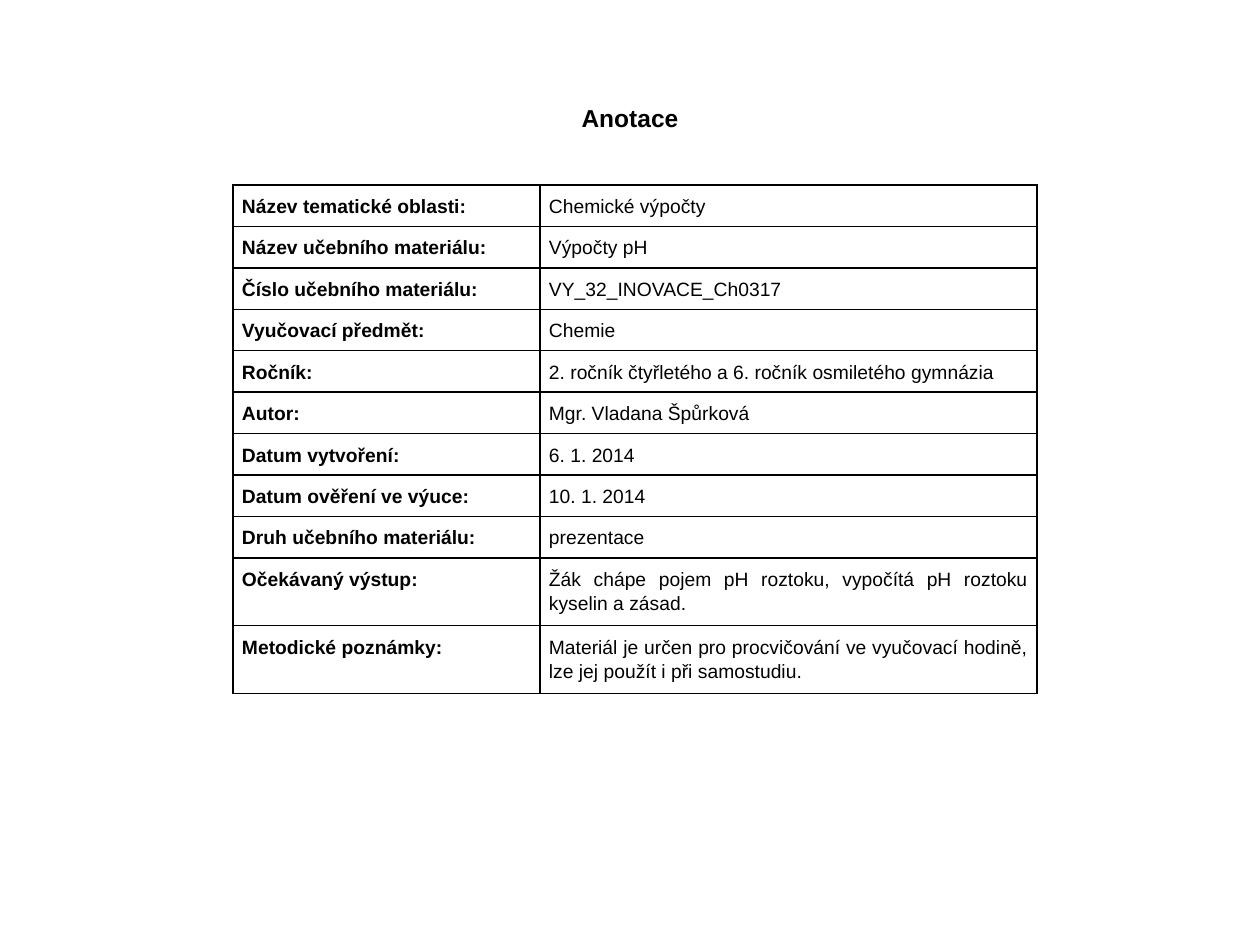
from lxml import etree
from pptx import Presentation
from pptx import util as u
from pptx.dml.color import RGBColor
from pptx.enum import text
from pptx.oxml.ns import qn

TITLE = "Anotace"
ROWS = [
    ("Název tematické oblasti:", "Chemické výpočty"),
    ("Název učebního materiálu:", "Výpočty pH"),
    ("Číslo učebního materiálu:", "VY_32_INOVACE_Ch0317"),
    ("Vyučovací předmět:", "Chemie"),
    ("Ročník:", "2. ročník čtyřletého a 6. ročník osmiletého gymnázia"),
    ("Autor:", "Mgr. Vladana Špůrková"),
    ("Datum vytvoření:", "6. 1. 2014"),
    ("Datum ověření ve výuce:", "10. 1. 2014"),
    ("Druh učebního materiálu:", "prezentace"),
    ("Očekávaný výstup:", "Žák chápe pojem pH roztoku, vypočítá pH roztoku kyselin a zásad."),
    ("Metodické poznámky:",
     "Materiál je určen pro procvičování ve vyučovací hodině, lze jej použít i při samostudiu."),
]
COLS = (307, 497)
SHORT, SHORTS = 373, 9  # total height and number of the one-line rows
TALL = 68               # height of a two-line row
BLACK = RGBColor(0, 0, 0)
WHITE = RGBColor(255, 255, 255)
ALIGN = text.PP_ALIGN


def px(n):
    return u.Inches(n / 126)


def write(frame, words, size=11, bold=False, align=ALIGN.LEFT, lines=1.0):
    par = frame.paragraphs[0]
    par.alignment, par.line_spacing = align, lines
    run = par.add_run()
    run.text = words
    font = run.font
    font.name, font.size, font.bold = "Arial", u.Pt(size), bold
    font.color.rgb = BLACK


def frame_cell(cell):
    """Draw a thin line on all four sides."""
    props = cell._tc.get_or_add_tcPr()
    for i, side in enumerate(("lnL", "lnR", "lnT", "lnB")):
        line = etree.Element(qn("a:" + side), w=str(u.Pt(1)))
        fill = etree.SubElement(line, qn("a:solidFill"))
        etree.SubElement(fill, qn("a:srgbClr"), val=str(BLACK))
        props.insert(i, line)


def main():
    deck = Presentation()
    deck.slide_width, deck.slide_height = px(1260), px(945)
    slide = deck.slides.add_slide(deck.slide_layouts[5])

    title = slide.shapes.title
    title.left, title.top, title.width, title.height = px(0), px(86), px(1260), px(63)
    title.text_frame.vertical_anchor = text.MSO_ANCHOR.MIDDLE
    write(title.text_frame, TITLE, size=14, bold=True, align=ALIGN.CENTER)

    high = SHORT + TALL * (len(ROWS) - SHORTS)
    table = slide.shapes.add_table(
        len(ROWS), len(COLS), px(233), px(185), px(sum(COLS)), px(high)).table
    table.first_row = table.horz_banding = False
    for col, wide in zip(table.columns, COLS):
        col.width = px(wide)
    for i, row in enumerate(ROWS):
        table.rows[i].height = px(SHORT) // SHORTS if i < SHORTS else px(TALL)
        for j, words in enumerate(row):
            cell = table.cell(i, j)
            cell.margin_left = cell.margin_right = px(9)
            cell.margin_top = cell.margin_bottom = px(8)
            cell.fill.solid()
            cell.fill.fore_color.rgb = WHITE
            frame_cell(cell)
            label = j == 0
            write(cell.text_frame, words, bold=label, lines=1.15,
                  align=ALIGN.LEFT if label and i < 8 else ALIGN.JUSTIFY)

    deck.save("out.pptx")


if __name__ == "__main__":
    main()
